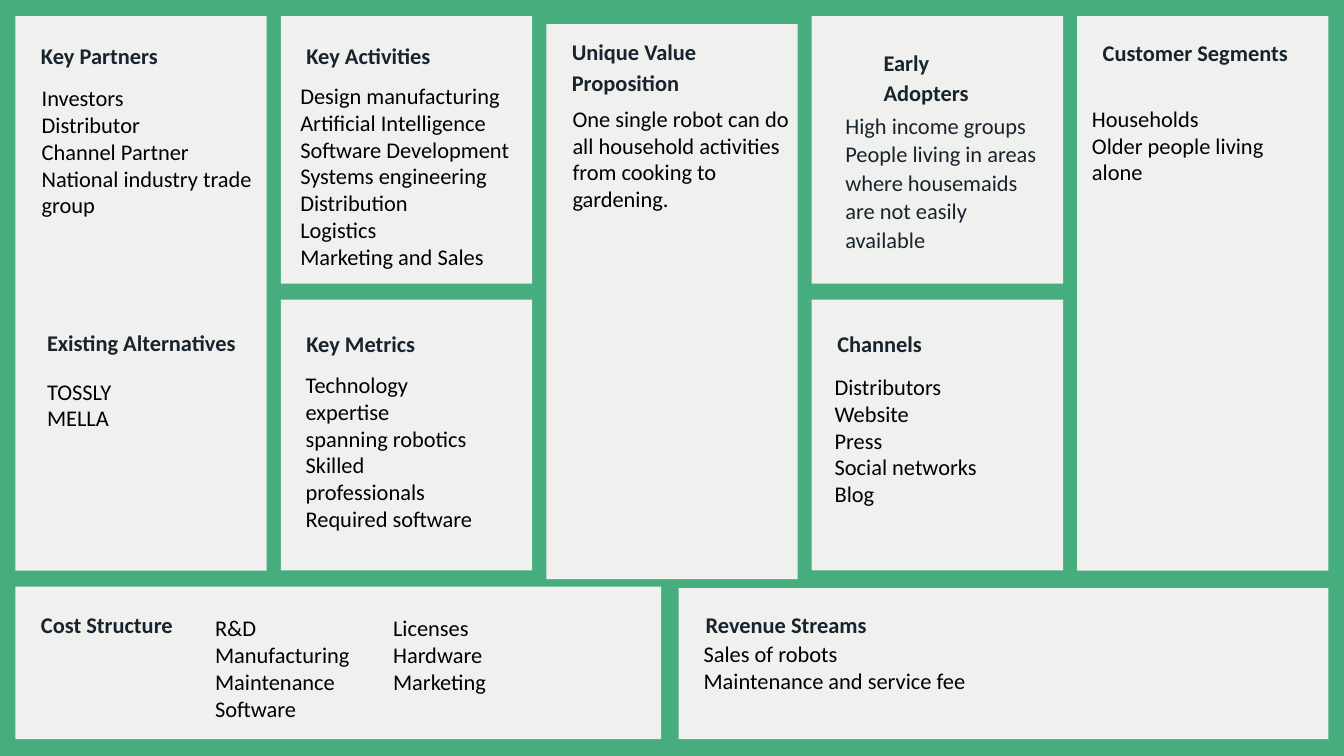
from pptx import Presentation
from pptx.dml.color import RGBColor
from pptx.enum.shapes import MSO_SHAPE as Shape
from pptx.enum.text import MSO_AUTO_SIZE as AutoSize
from pptx.oxml import parse_xml
from pptx.oxml.ns import nsdecls
from pptx.util import Inches, Pt

GREEN, PAPER, INK, BLACK = "45AD7E", "F0F0EE", "17242D", "000000"
PADDED = (0.1, 0.05)


def color(value):
    return RGBColor.from_string(value)


def write(box, lines, size=24, ink=BLACK, bold=False, spacing=None, tab=None):
    """Write one paragraph per line, with an optional tab stop in inches."""
    frame = box.text_frame
    for index, line in enumerate(lines):
        para = frame.add_paragraph() if index else frame.paragraphs[0]
        if spacing:
            para.line_spacing = spacing
        if tab:
            para._p.get_or_add_pPr().append(parse_xml(
                f'<a:tabLst {nsdecls("a")}>'
                f'<a:tab pos="{Inches(tab)}" algn="l"/></a:tabLst>'))
        span = para.add_run()
        span.text = line
        span.font.name = "Calibri"
        span.font.size = Pt(size)
        span.font.bold = bold
        span.font.color.rgb = color(ink)


class Canvas:
    """Holds the style and the current page."""

    def __init__(self, page):
        self.page = page
        fill = page.background.fill
        fill.solid()
        fill.fore_color.rgb = color(GREEN)

    def panel(self, left, top, right, bottom):
        shape = self.page.shapes.add_shape(
            Shape.RECTANGLE, Inches(left), Inches(top),
            Inches(right - left), Inches(bottom - top))
        shape.shadow.inherit = False
        shape.fill.solid()
        shape.fill.fore_color.rgb = color(PAPER)
        shape.line.fill.background()

    def text(self, left, top, width, height, lines, inset=(0, 0),
             grow=True, **style):
        box = self.page.shapes.add_textbox(
            Inches(left), Inches(top), Inches(width), Inches(height))
        frame = box.text_frame
        frame.word_wrap = True
        frame.auto_size = AutoSize.SHAPE_TO_FIT_TEXT if grow else AutoSize.NONE
        frame.margin_left = frame.margin_right = Inches(inset[0])
        frame.margin_top = frame.margin_bottom = Inches(inset[1])
        write(box, lines, **style)

    def heading(self, left, top, title, width=2.97, height=0.41, spacing=1.3,
                **options):
        self.text(left, top, width, height, [title], ink=INK, bold=True,
                  spacing=spacing, **options)

    def body(self, left, top, lines, width=3.23, rows=None, **options):
        self.text(left, top, width, 0.4 * (rows or len(lines)), lines, **options)


def main():
    deck = Presentation()
    deck.slide_width, deck.slide_height = Inches(20), Inches(11.25)
    canvas = Canvas(deck.slides.add_slide(deck.slide_layouts[6]))

    # Five columns: the second and fourth are split, the middle one sits lower
    full, split = [(0.24, 8.49)], [(0.24, 4.22), (4.46, 8.49)]
    for column, spans in enumerate([full, split, [(0.36, 8.62)], split, full]):
        left = 0.23 + 3.95 * column
        for top, bottom in spans:
            canvas.panel(left, top, left + 3.74, bottom)

    # Bottom row
    canvas.panel(0.23, 8.73, 9.84, 11)
    canvas.panel(10.1, 8.75, 19.77, 11)

    # Headings
    for left, top, title in [
        (0.61, 0.51, "Key Partners"),
        (4.56, 0.51, "Key Activities"),
        (0.7, 4.77, "Existing Alternatives"),
        (4.56, 4.79, "Key Metrics"),
        (12.46, 4.79, "Channels"),
        (0.61, 8.97, "Cost Structure"),
        (10.5, 8.97, "Revenue Streams"),
    ]:
        canvas.heading(left, top, title)
    canvas.heading(8.51, 0.51, "Unique Value Proposition", height=0.76,
                   spacing=1.14)
    canvas.heading(16.41, 0.53, "Customer Segments", height=0.38, spacing=1.14)
    canvas.heading(13.05, 0.62, "Early Adopters", width=2.2, height=0.48,
                   spacing=1.14, inset=PADDED, grow=False)

    # Body texts
    canvas.body(0.62, 1.25, ["Investors", "Distributor", "Channel Partner",
                             "National industry trade group"], rows=5)
    canvas.body(0.7, 5.62, ["TOSSLY", "MELLA"])
    canvas.body(4.37, 1.17, ["Design manufacturing", "Artificial Intelligence",
                             "Software Development", "Systems engineering",
                             "Distribution", "Logistics",
                             "Marketing and Sales"],
                width=3.37, inset=PADDED)
    canvas.body(4.45, 5.47, ["Technology expertise spanning robotics",
                             "Skilled professionals", "Required software"],
                width=2.73, rows=6, inset=PADDED)
    canvas.body(8.52, 1.56, ["One single robot can do all household activities "
                             "from cooking to gardening."], rows=4)
    canvas.body(12.58, 1.64, ["High income groups",
                              "People living in areas where housemaids are "
                              "not easily available"],
                width=2.97, rows=5, ink=INK, spacing=1.06)
    canvas.body(12.42, 5.55, ["Distributors", "Website", "Press",
                              "Social networks", "Blog"])
    canvas.body(16.25, 1.56, ["Households", "Older people living alone"], rows=3)
    canvas.body(3.2, 9.14, ["R&D\tLicenses", "Manufacturing\tHardware",
                            "Maintenance\tMarketing", "Software"],
                width=6.5, tab=2.65)
    canvas.body(10.47, 9.53, ["Sales of robots", "Maintenance and service fee"],
                width=9.09)

    deck.save("out.pptx")


if __name__ == "__main__":
    main()
